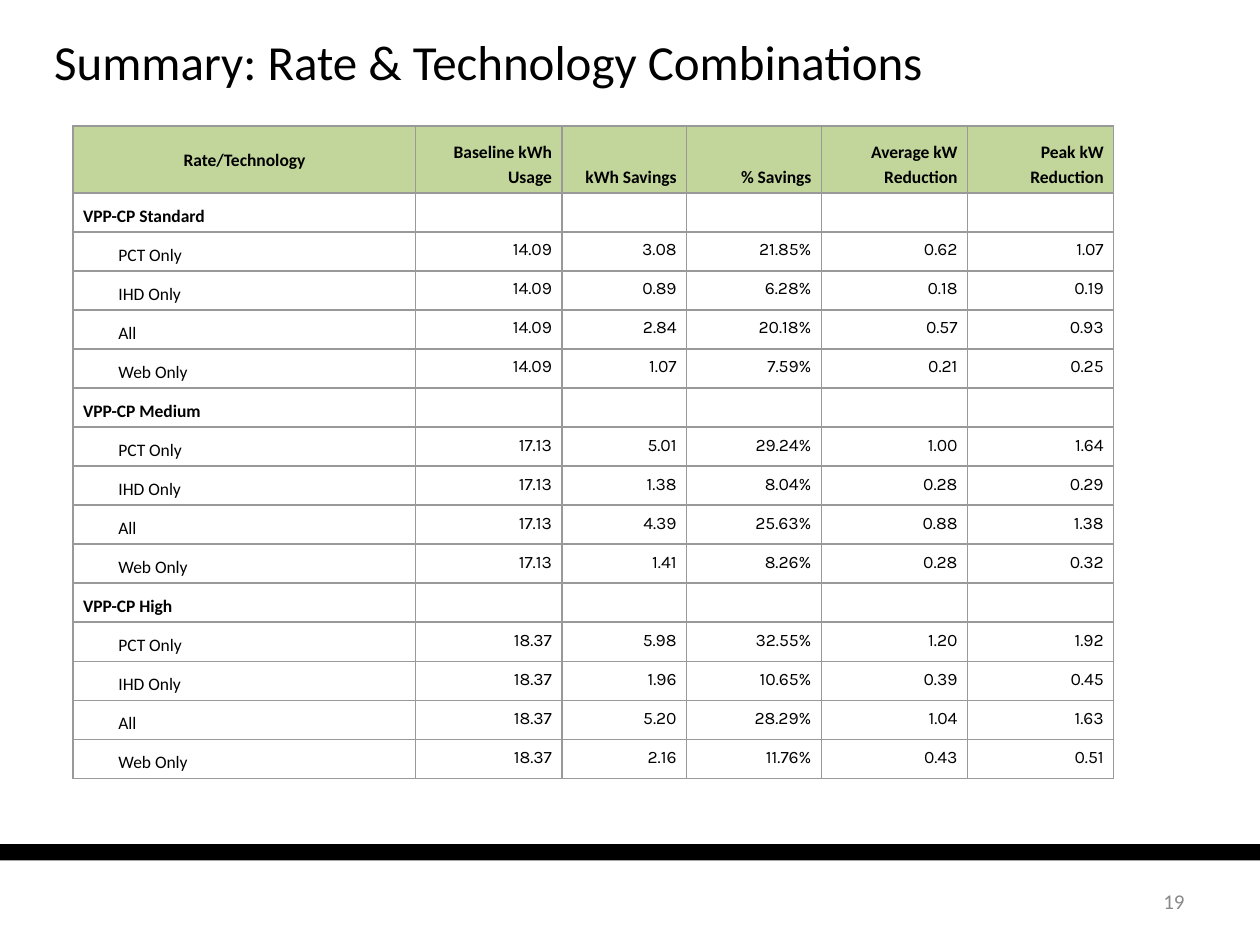
import pptx
import pptx.util
import pptx.dml.color
import pptx.enum.shapes
import pptx.enum.text
import pptx.oxml
import pptx.oxml.ns

Inches = pptx.util.Inches
Pt = pptx.util.Pt
RGBColor = pptx.dml.color.RGBColor
ALIGN = pptx.enum.text.PP_ALIGN
ANCHOR = pptx.enum.text.MSO_ANCHOR

BLACK = RGBColor(0x00, 0x00, 0x00)
GREY = RGBColor(0x89, 0x89, 0x89)
GREEN = RGBColor(0xC2, 0xD6, 0x9B)
BORDER = RGBColor(0x99, 0x99, 0x99)

HEADERS = ["Rate/Technology", "Baseline kWh Usage", "kWh Savings",
           "% Savings", "Average kW Reduction", "Peak kW Reduction"]
COL_WIDTHS = [2.72, 1.16, 0.99, 1.07, 1.16, 1.16]
TECHNOLOGIES = ["PCT Only", "IHD Only", "All", "Web Only"]
RATES = {
    "VPP-CP Standard": ("14.09", [
        ("3.08", "21.85%", "0.62", "1.07"),
        ("0.89", "6.28%", "0.18", "0.19"),
        ("2.84", "20.18%", "0.57", "0.93"),
        ("1.07", "7.59%", "0.21", "0.25")]),
    "VPP-CP Medium": ("17.13", [
        ("5.01", "29.24%", "1.00", "1.64"),
        ("1.38", "8.04%", "0.28", "0.29"),
        ("4.39", "25.63%", "0.88", "1.38"),
        ("1.41", "8.26%", "0.28", "0.32")]),
    "VPP-CP High": ("18.37", [
        ("5.98", "32.55%", "1.20", "1.92"),
        ("1.96", "10.65%", "0.39", "0.45"),
        ("5.20", "28.29%", "1.04", "1.63"),
        ("2.16", "11.76%", "0.43", "0.51")]),
}


class SlideBuilder:
    font = "Calibri"
    number_font = "Karla"
    cell_margins = {"margin_left": Inches(0.08), "margin_right": Inches(0.08),
                    "margin_top": Inches(0.04), "margin_bottom": Inches(0.04)}
    no_margins = dict.fromkeys(cell_margins, 0)

    def __init__(self, s):
        self.s = s

    def apply(self, target, values):
        for name, value in values.items():
            setattr(target, name, value)

    def text(self, p, text, size, color=BLACK, bold=False, name=None, **layout):
        self.apply(p, layout)
        r = p.add_run()
        r.text = text
        self.apply(r.font, {"size": Pt(size), "bold": bold, "name": name or self.font})
        r.font.color.rgb = color

    def title(self, text, left, top, width, height):
        sp = self.s.shapes.title
        self.apply(sp, {"left": Inches(left), "top": Inches(top),
                        "width": Inches(width), "height": Inches(height)})
        tf = sp.text_frame
        self.apply(tf, {"word_wrap": True, "vertical_anchor": ANCHOR.MIDDLE,
                        **self.no_margins})
        self.text(tf.paragraphs[0], text, 28, alignment=ALIGN.LEFT)

    def bar(self, *box):
        sp = self.s.shapes.add_shape(pptx.enum.shapes.MSO_SHAPE.RECTANGLE,
                                     *map(Inches, box))
        sp.shadow.inherit = False
        sp.fill.solid()
        sp.fill.fore_color.rgb = BLACK
        sp.line.fill.background()

    def page_number(self, text, *box):
        tf = self.s.shapes.add_textbox(*map(Inches, box)).text_frame
        self.apply(tf, {"word_wrap": True, "vertical_anchor": ANCHOR.MIDDLE})
        self.text(tf.paragraphs[0], text, 12, GREY, alignment=ALIGN.RIGHT)

    def cell(self, cell, text, anchor, fill=None, indent=0, **style):
        self.apply(cell, {"vertical_anchor": anchor, **self.cell_margins})
        tcPr = cell._tc.get_or_add_tcPr()
        for side in ("lnL", "lnR", "lnT", "lnB"):
            tcPr.append(pptx.oxml.parse_xml(
                f'<a:{side} {pptx.oxml.ns.nsdecls("a")} w="{Pt(1)}"><a:solidFill>'
                f'<a:srgbClr val="{BORDER}"/></a:solidFill></a:{side}>'))
        if fill is None:
            cell.fill.background()
        else:
            cell.fill.solid()
            cell.fill.fore_color.rgb = fill
        p = cell.text_frame.paragraphs[0]
        if not text:
            p._p.append(pptx.oxml.parse_xml(
                f'<a:endParaRPr {pptx.oxml.ns.nsdecls("a")} sz="1000"/>'))
            return
        if indent:
            pPr = p._p.get_or_add_pPr()
            pPr.set("marL", "0")
            pPr.set("indent", str(Inches(indent)))
        self.text(p, text, 10, line_spacing=1.15, **style)

    def table(self, left, top, height):
        n_rows = 1 + len(RATES) * (1 + len(TECHNOLOGIES))
        table = self.s.shapes.add_table(
            n_rows, len(HEADERS), Inches(left), Inches(top),
            Inches(sum(COL_WIDTHS)), Inches(height)).table
        self.apply(table, {"first_row": False, "horz_banding": False})
        for column, width in zip(table.columns, COL_WIDTHS):
            column.width = Inches(width)
        header_height = 0.53
        for i, row in enumerate(table.rows):
            row.height = Inches((height - header_height) / (n_rows - 1) if i else header_height)

        for c, text in enumerate(HEADERS):
            self.cell(table.cell(0, c), text, ANCHOR.BOTTOM if c else ANCHOR.MIDDLE,
                      GREEN, bold=True, alignment=ALIGN.RIGHT if c else ALIGN.CENTER,
                      space_after=Pt(0 if c else 2))
        r = 1
        for rate, (baseline, results) in RATES.items():
            self.cell(table.cell(r, 0), rate, ANCHOR.BOTTOM, bold=True)
            for c in range(1, len(HEADERS)):
                self.cell(table.cell(r, c), "", ANCHOR.TOP)
            for r, (technology, values) in enumerate(zip(TECHNOLOGIES, results), r + 1):
                self.cell(table.cell(r, 0), technology, ANCHOR.BOTTOM, indent=0.28)
                for c, value in enumerate((baseline, *values), 1):
                    self.cell(table.cell(r, c), value, ANCHOR.TOP,
                              name=self.number_font, alignment=ALIGN.RIGHT)
            r += 1


def main():
    prs = pptx.Presentation()
    prs.slide_width, prs.slide_height = Inches(10), Inches(7.5)
    builder = SlideBuilder(prs.slides.add_slide(prs.slide_layouts[5]))
    builder.bar(-0.03, 6.7, 10.04, 0.13)
    builder.page_number("19", 7.17, 6.95, 2.33, 0.4)
    builder.table(0.58, 1, 5.18)
    builder.title("Summary: Rate & Technology Combinations", 0.43, 0.17, 8.24, 0.62)
    prs.save("out.pptx")


if __name__ == "__main__":
    main()
